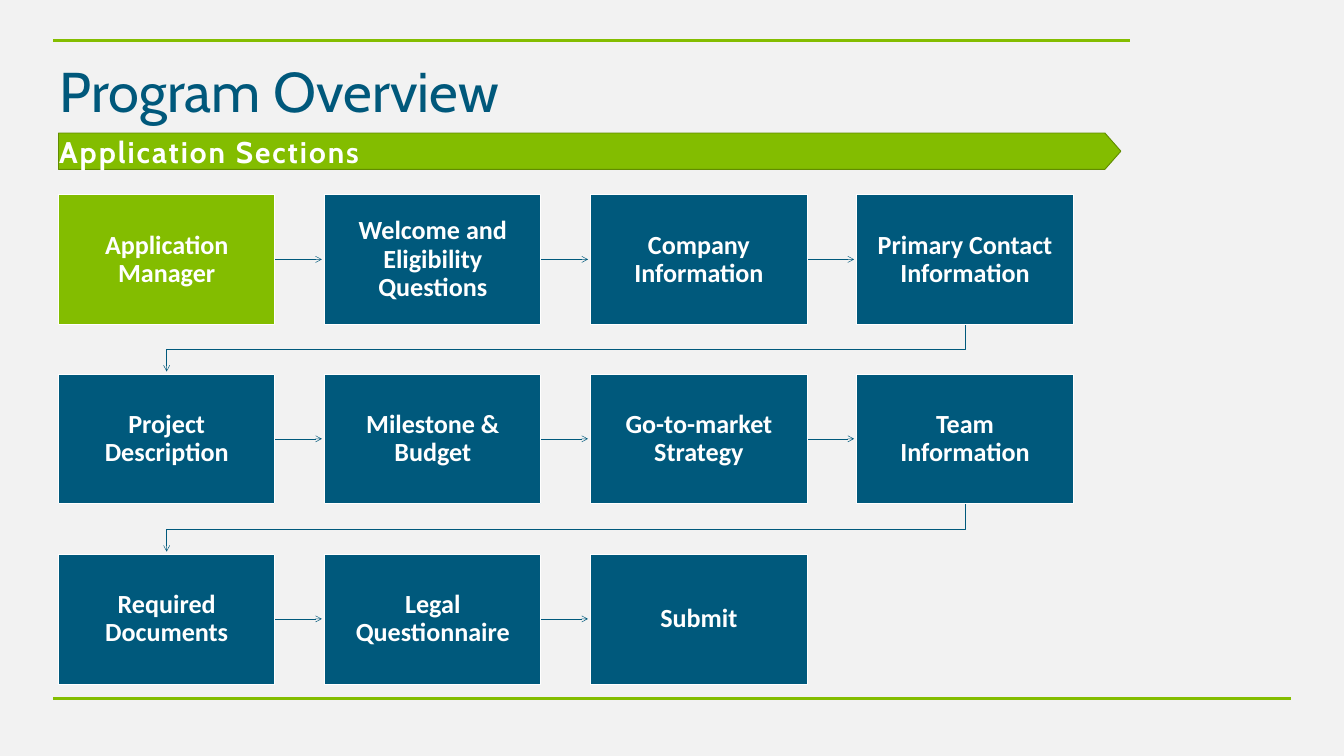
from dataclasses import dataclass
from itertools import pairwise

from lxml.etree import SubElement
from pptx import Presentation
from pptx.dml.color import RGBColor
from pptx.enum.shapes import MSO_CONNECTOR as Connector, MSO_SHAPE as Preset
from pptx.enum.text import MSO_ANCHOR as Anchor, PP_ALIGN as Align
from pptx.oxml.ns import qn
from pptx.util import Pt

PX = 9144
GREEN, BLUE, NAVY, WHITE = "83BD00", "00597C", "00587B", "FFFFFF"
BOX_W, BOX_H = 322, 193
GRID_LEFT, GRID_TOP = 87, 290
COLUMNS, COLUMN_STEP, TWO_ROW_STEPS = 4, 396, 535
ARROW_GAP = 4
SECTIONS = [
    "Application Manager", "Welcome and Eligibility Questions",
    "Company Information", "Primary Contact Information",
    "Project Description", "Milestone & Budget",
    "Go-to-market Strategy", "Team Information",
    "Required Documents", "Legal Questionnaire", "Submit",
]
TITLE_FONT = {"name": "Cabin", "size": Pt(60), "bold": False}
BANNER_FONT = {"name": "Cabin", "size": Pt(32), "bold": True}
SECTION_FONT = {"name": "Calibri", "size": Pt(28), "bold": True}


@dataclass(frozen=True)
class Section:
    """One step of the application with its place on the slide."""
    label: str
    left: int
    top: int
    fill: str

    @property
    def center(self) -> int:
        """Horizontal centre of the box."""
        return self.left + BOX_W // 2

    @property
    def middle(self) -> int:
        """Vertical centre of the box."""
        return self.top + BOX_H // 2


def rgb(value: str) -> RGBColor:
    """Turn a hex string into a colour."""
    return RGBColor.from_string(value)


def px(*lengths: int) -> list[int]:
    """Scale pixel lengths to EMU."""
    return [length * PX for length in lengths]


def set_line(shape, color: str, width: float, arrow: bool = False) -> None:
    """Style an outline, with an open arrowhead at its end if wanted."""
    shape.line.color.rgb = rgb(color)
    shape.line.width = Pt(width)
    if arrow:
        SubElement(shape.element.spPr.find(qn("a:ln")), qn("a:tailEnd"), type="arrow")


def write(shape, text: str, font: dict, color: str, inset: tuple[int, int],
          align=Align.LEFT, anchor=Anchor.MIDDLE, wrap: bool = True,
          line_spacing: float = 1.0):
    """Put one formatted paragraph in a shape and return its run."""
    frame = shape.text_frame
    side, edge = px(*inset)
    layout = {"word_wrap": wrap, "vertical_anchor": anchor, "margin_left": side,
              "margin_right": side, "margin_top": edge, "margin_bottom": edge}
    for name, value in layout.items():
        setattr(frame, name, value)
    paragraph = frame.paragraphs[0]
    paragraph.alignment = align
    paragraph.line_spacing = line_spacing
    run = paragraph.add_run()
    run.text = text
    for name, value in font.items():
        setattr(run.font, name, value)
    run.font.color.rgb = rgb(color)
    return run


def add_block(slide, preset, box: tuple[int, int, int, int], fill: str, outline: str):
    """Add a filled preset shape with a thin outline."""
    block = slide.shapes.add_shape(preset, *px(*box))
    block.shadow.inherit = False
    block.fill.solid()
    block.fill.fore_color.rgb = rgb(fill)
    set_line(block, outline, 1)
    return block


def add_straight(slide, start: tuple[int, int], end: tuple[int, int],
                 color: str, width: float, arrow: bool = False) -> None:
    """Add a straight line or arrow."""
    line = slide.shapes.add_connector(Connector.STRAIGHT, *px(*start, *end))
    set_line(line, color, width, arrow)
    SubElement(line.element.spPr, qn("a:effectLst"))


def add_row_return(slide, last: Section, first: Section) -> None:
    """Lead from the end of one row to the start of the next."""
    bottom = last.top + BOX_H
    turn = (bottom + first.top) // 2
    builder = slide.shapes.build_freeform(last.center, bottom, scale=PX)
    builder.add_line_segments([(last.center, turn), (first.center, turn),
                               (first.center, first.top - ARROW_GAP)], close=False)
    route = builder.convert_to_shape()
    route.shadow.inherit = False
    route.fill.background()
    set_line(route, BLUE, 0.5, arrow=True)


def add_step(slide, source: Section, target: Section) -> None:
    """Connect two consecutive sections."""
    if source.top == target.top:
        add_straight(slide, (source.left + BOX_W, source.middle),
                     (target.left - ARROW_GAP, target.middle), BLUE, 0.5, arrow=True)
    else:
        add_row_return(slide, source, target)


def add_section(slide, section: Section) -> None:
    """Draw one labelled section box."""
    box = (section.left, section.top, BOX_W, BOX_H)
    block = add_block(slide, Preset.RECTANGLE, box, section.fill, WHITE)
    write(block, section.label, SECTION_FONT, WHITE, (22, 22), Align.CENTER,
          line_spacing=0.9)


def place_sections() -> list[Section]:
    """Lay the sections out row by row."""
    return [Section(label, GRID_LEFT + index % COLUMNS * COLUMN_STEP,
                    GRID_TOP + index // COLUMNS * TWO_ROW_STEPS // 2,
                    BLUE if index else GREEN)
            for index, label in enumerate(SECTIONS)]


def main() -> None:
    """Build and save the slide."""
    deck = Presentation()
    deck.slide_width, deck.slide_height = px(2000, 1125)
    slide = deck.slides.add_slide(deck.slide_layouts[6])
    slide.background.fill.solid()
    slide.background.fill.fore_color.rgb = rgb("F2F2F2")

    for right, height in ((1681, 60), (1921, 1040)):
        add_straight(slide, (79, height), (right, height), "84BD00", 3)

    banner = add_block(slide, Preset.PENTAGON, (87, 198, 1581, 54), GREEN, "618C00")
    banner.adjustments[0] = 0.44
    heading = write(banner, "Application Sections", BANNER_FONT, WHITE, (1, 0))
    heading.font._element.set("spc", "210")

    title = slide.shapes.add_textbox(*px(79, 79, 732, 111))
    write(title, "Program Overview", TITLE_FONT, NAVY, (10, 5),
          anchor=Anchor.TOP, wrap=False)

    sections = place_sections()
    for source, target in pairwise(sections):
        add_step(slide, source, target)
    for section in sections:
        add_section(slide, section)

    deck.save("out.pptx")


if __name__ == "__main__":
    main()
